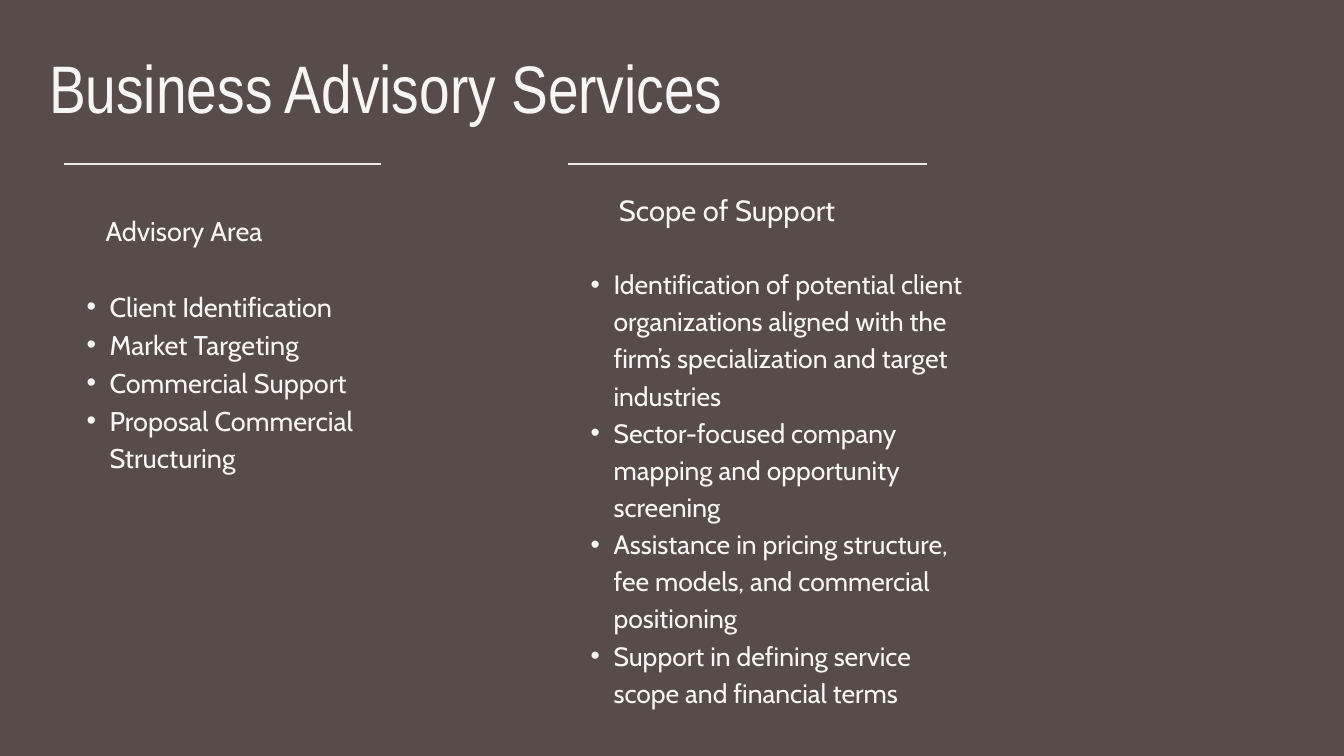
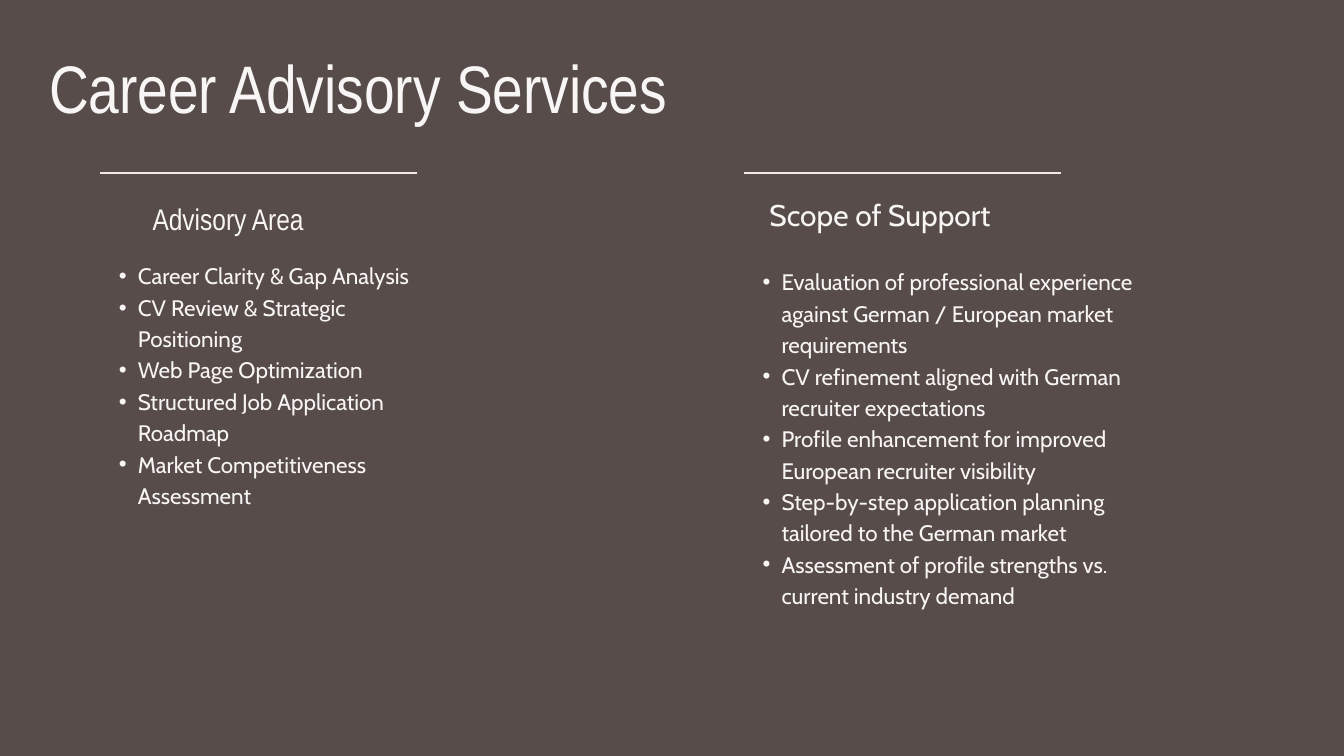
from dataclasses import dataclass

from lxml.etree import SubElement
from pptx import Presentation
from pptx.dml.color import RGBColor as Rgb
from pptx.enum.shapes import MSO_CONNECTOR as Conn
from pptx.enum.text import MSO_ANCHOR as Anchor, MSO_AUTO_SIZE as Fit, PP_ALIGN as Align
from pptx.oxml.ns import qn
from pptx.util import Inches, Pt


@dataclass(frozen=True)
class Theme:
    back: Rgb = Rgb.from_string("584C4A")
    ink: Rgb = Rgb.from_string("F8F6F4")
    rule: Rgb = Rgb.from_string("EFE9E4")
    narrow: str = "Arial Narrow"
    body: str = "Cabin"
    title: float = 72
    lead: float = 79.2
    weight: float = 2


theme = Theme()

# Each column: left edge, rule width, then
# head: text, font, size, line pitch, top, indent
# list: size, line pitch, top, width, height, bullet hang, items
pages = [
    ("Business Advisory Services", 2.44, [
        (0.95, 4.72,
         ("Advisory Area", theme.body, 29, 40.6, 3.11, 0.62),
         (29, 40.6, 4.24, 4.72, 3.34, 0.34, [
             "Client Identification",
             "Market Targeting",
             "Commercial Support",
             "Proposal Commercial Structuring",
         ])),
        (8.45, 5.35,
         ("Scope of Support", theme.body, 31.3, 32.9, 2.93, 0.76),
         (28.4, 39.8, 3.91, 6.12, 6.59, 0.34, [
             "Identification of potential client organizations aligned with "
             "the firm’s specialization and target industries",
             "Sector-focused company mapping and opportunity screening",
             "Assistance in pricing structure, fee models, and commercial positioning",
             "Support in defining service scope and financial terms",
         ])),
    ]),
    ("Career Advisory Services", 2.57, [
        (1.49, 4.72,
         ("Advisory Area", theme.narrow, 32, 33.6, 3.06, 0.78),
         (24, 33.6, 3.84, 4.72, 4.09, 0.28, [
             "Career Clarity & Gap Analysis",
             "CV Review & Strategic Positioning",
             "Web Page Optimization",
             "Structured Job Application Roadmap",
             "Market Competitiveness Assessment",
         ])),
        (11.07, 4.72,
         ("Scope of Support", theme.body, 32, 33.6, 3, 0.38),
         (24, 33.6, 3.93, 6.09, 4.99, 0.28, [
             "Evaluation of professional experience against German / European "
             "market requirements",
             "CV refinement aligned with German recruiter expectations",
             "Profile enhancement for improved European recruiter visibility",
             "Step-by-step application planning tailored to the German market",
             "Assessment of profile strengths vs. current industry demand",
         ])),
    ]),
]


def fill(box, at, lines, font, size, pitch, inset=0, hang=0):
    """Place a placeholder and set its text; a hang adds bullets."""
    box.left, box.top, box.width, box.height = map(Inches, at)
    frame = box.text_frame
    frame.text = "\n".join(lines)
    frame.word_wrap = True
    frame.auto_size = Fit.NONE
    frame.vertical_anchor = Anchor.TOP
    frame.margin_left = frame.margin_right = 0
    frame.margin_top = frame.margin_bottom = 0
    for para in frame.paragraphs:
        props = para._p.get_or_add_pPr()
        props.set("marL", str(Inches(inset)))
        props.set("indent", str(Inches(-hang)))
        if hang:
            SubElement(props, qn("a:buFont"), typeface="Arial")
            SubElement(props, qn("a:buChar"), char="•")
        else:
            SubElement(props, qn("a:buNone"))
        para.alignment = Align.LEFT
        para.line_spacing = Pt(pitch)
        para.space_before = Pt(0)
        for run in para.runs:
            run.font.name = font
            run.font.size = Pt(size)
            run.font.bold = False
            run.font.color.rgb = theme.ink


deck = Presentation()
deck.slide_width, deck.slide_height = Inches(20), Inches(11.25)
back = deck.slide_master.background.fill
back.solid()
back.fore_color.rgb = theme.back
layout = deck.slide_layouts.get_by_name("Comparison")

for title, level, cols in pages:
    slide = deck.slides.add_slide(layout)
    fill(slide.shapes.title, (0.73, 0.79, 12.25, 1.13), [title],
         theme.narrow, theme.title, theme.lead)
    slots = slide.placeholders
    for num, (left, width, head, block) in enumerate(cols):
        text, font, size, pitch, top, inset = head
        fill(slots[2 * num + 1], (left, top, width, 0.49), [text],
             font, size, pitch, inset)

        size, pitch, top, wide, high, hang, items = block
        fill(slots[2 * num + 2], (left, top, wide, high), items,
             theme.body, size, pitch, 2 * hang, hang)

        rule = slide.shapes.add_connector(
            Conn.STRAIGHT, Inches(left), Inches(level),
            Inches(left + width), Inches(level))
        rule.line.color.rgb = theme.rule
        rule.line.width = Pt(theme.weight)
        SubElement(rule._element.spPr, qn("a:effectLst"))

deck.save("out.pptx")
